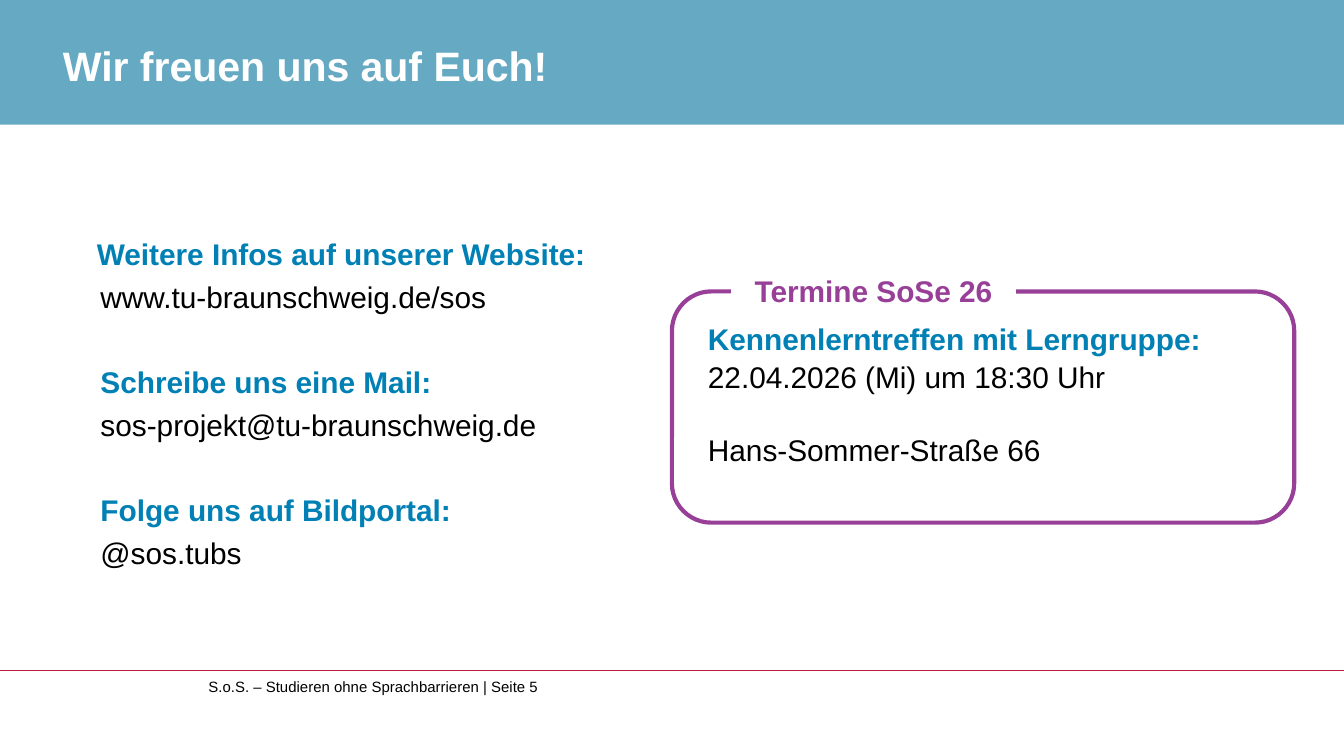
from dataclasses import dataclass

from lxml import etree
from pptx import Presentation
from pptx.dml.color import RGBColor
from pptx.enum import shapes as es, text as et
from pptx.oxml.ns import qn
from pptx.util import Cm, Pt


@dataclass(frozen=True)
class Theme:
    font: str = "Arial"
    band: str = "66A9C3"
    heading: str = "0080B4"
    accent: str = "984098"
    rule: str = "BE1E3C"
    black: str = "000000"
    white: str = "FFFFFF"
    title_pt: float = 22
    body_pt: float = 16
    footer_pt: float = 8


@dataclass(frozen=True)
class Box:
    left: float
    top: float
    width: float
    height: float

    def lengths(self) -> tuple:
        return Cm(self.left), Cm(self.top), Cm(self.width), Cm(self.height)


@dataclass(frozen=True)
class Line:
    text: str
    size: float
    color: str = Theme.black
    bold: bool = False
    before: float = 0
    indent: float = 0
    align: et.PP_ALIGN = et.PP_ALIGN.LEFT
    spacing: float = 1.0


T = Theme()
LEADING = 1.04
GAP = 3.2  # points between the lines of a contact
BLOCK_GAP = 25.5  # points between contacts

CONTACTS = [
    ("Weitere Infos auf unserer Website:", "www.tu-braunschweig.de/sos"),
    ("Schreibe uns eine Mail:", "sos-projekt@tu-braunschweig.de"),
    ("Folge uns auf Bildportal:", "@sos.tubs"),
]


def write(tf, lines: list[Line], anchor=et.MSO_ANCHOR.TOP) -> None:
    tf.word_wrap = True
    tf.auto_size = et.MSO_AUTO_SIZE.NONE
    tf.vertical_anchor = anchor
    tf.margin_left = tf.margin_top = tf.margin_right = tf.margin_bottom = 0
    for i, line in enumerate(lines):
        p = tf.add_paragraph() if i else tf.paragraphs[0]
        p.text = line.text
        p.alignment = line.align
        p.space_before = Pt(line.before)
        p.line_spacing = line.spacing
        if line.indent:
            p._p.get_or_add_pPr().set("marL", str(Cm(line.indent)))
        p.font.name, p.font.size, p.font.bold = T.font, Pt(line.size), line.bold
        p.font.color.rgb = RGBColor.from_string(line.color)


def add_text(s, box: Box, lines: list[Line]) -> None:
    write(s.shapes.add_textbox(*box.lengths()).text_frame, lines)


def add_box(s, kind, box: Box, fill: str | None = None, line: str | None = None):
    sp = s.shapes.add_shape(kind, *box.lengths())
    sp.shadow.inherit = False
    if fill:
        sp.fill.solid()
        sp.fill.fore_color.rgb = RGBColor.from_string(fill)
    else:
        sp.fill.background()
    if line:
        sp.line.color.rgb = RGBColor.from_string(line)
        sp.line.width = Pt(2.25)
    else:
        sp.line.fill.background()
    return sp


def add_header(s, width: float) -> None:
    """Lay the coloured band behind the title placeholder."""
    band = add_box(s, es.MSO_SHAPE.RECTANGLE, Box(0, 0, width, 2.36), fill=T.band)
    title = s.shapes.title
    title._element.addprevious(band._element)
    title.left, title.top, title.width, title.height = Box(1.19, 0.23, 23.27, 1.47).lengths()
    write(title.text_frame,
          [Line("Wir freuen uns auf Euch!", T.title_pt, T.white, True)],
          et.MSO_ANCHOR.BOTTOM)


def add_footer(s, width: float) -> None:
    y = Cm(12.67)
    rule = s.shapes.add_connector(es.MSO_CONNECTOR.STRAIGHT, 0, y, Cm(width), y)
    rule.line.color.rgb = RGBColor.from_string(T.rule)
    rule.line.width = Pt(0.75)
    etree.SubElement(rule._element.spPr, qn("a:effectLst"))
    add_text(s, Box(3.94, 12.8, 12.37, 0.69),
             [Line("S.o.S. – Studieren ohne Sprachbarrieren | Seite 5", T.footer_pt)])


def add_contacts(s) -> None:
    lines = []
    for i, (heading, value) in enumerate(CONTACTS):
        lines += [
            Line(heading, T.body_pt, T.heading, True, BLOCK_GAP if i else 0,
                 0.71 if i else 0.64, spacing=LEADING),
            Line(value, T.body_pt, before=GAP, indent=0.71, spacing=LEADING),
        ]
    add_text(s, Box(1.19, 4.42, 10.41, 6.35), lines)


def add_dates(s) -> None:
    frame = add_box(s, es.MSO_SHAPE.ROUNDED_RECTANGLE,
                    Box(12.7, 5.51, 11.76, 4.37), line=T.accent)
    frame.adjustments[0] = 0.17
    label = add_box(s, es.MSO_SHAPE.RECTANGLE, Box(13.82, 5.03, 5.38, 0.94), fill=T.white)
    write(label.text_frame,
          [Line("Termine SoSe 26", T.body_pt, T.accent, True, align=et.PP_ALIGN.CENTER)],
          et.MSO_ANCHOR.MIDDLE)
    add_text(s, Box(13.38, 6.04, 10.8, 3.4), [
        Line("Kennenlerntreffen mit Lerngruppe:", T.body_pt, T.heading, True, spacing=LEADING),
        Line("22.04.2026 (Mi) um 18:30 Uhr", T.body_pt, spacing=LEADING),
        Line("Hans-Sommer-Straße 66", T.body_pt, before=19.2, spacing=LEADING),
    ])


def main() -> None:
    prs = Presentation()
    width = 25.4
    prs.slide_width, prs.slide_height = Cm(width), Cm(14.29)
    s = prs.slides.add_slide(prs.slide_layouts[5])
    add_header(s, width)
    add_footer(s, width)
    add_contacts(s)
    add_dates(s)
    prs.save("out.pptx")


if __name__ == "__main__":
    main()
